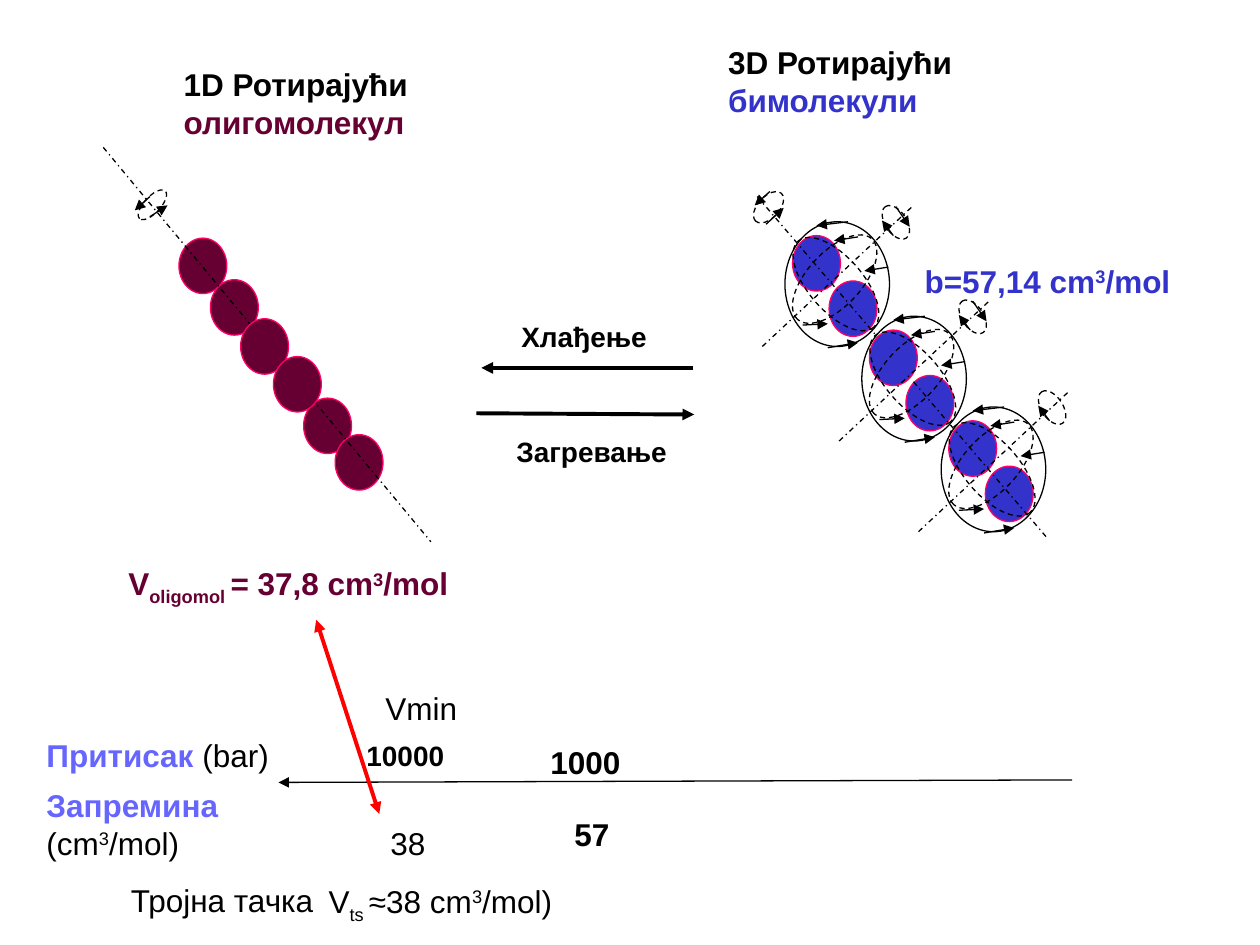
from typing import NamedTuple, Optional

from lxml.etree import SubElement
from pptx import Presentation
from pptx.dml.color import RGBColor
from pptx.enum.dml import MSO_LINE
from pptx.enum.shapes import MSO_CONNECTOR, MSO_SHAPE
from pptx.oxml.ns import qn
from pptx.util import Inches, Pt

BLACK = RGBColor(0x00, 0x00, 0x00)
BLUE = RGBColor(0x33, 0x33, 0xCC)
LILAC = RGBColor(0x66, 0x66, 0xFF)
WINE = RGBColor(0x66, 0x00, 0x33)
PINK = RGBColor(0xFF, 0x00, 0x66)
RED = RGBColor(0xFF, 0x00, 0x00)
COLS, ROWS = 100, 75
WIDE, HIGH = Inches(10), Inches(7.5)
BALL = (3.8, 4.4)
SUPER, SUB = 30, -25


class Oval(NamedTuple):
    x: float
    y: float
    w: float
    h: float
    turn: float = 0
    fill: Optional[RGBColor] = None
    edge: RGBColor = BLACK
    dash: Optional[MSO_LINE] = None


class Line(NamedTuple):
    x1: float
    y1: float
    x2: float
    y2: float
    dash: Optional[MSO_LINE] = None
    ends: tuple = ("tailEnd",)
    color: RGBColor = BLACK
    width: float = 0.75


class Span(NamedTuple):
    text: str
    color: Optional[RGBColor] = None
    bold: Optional[bool] = None
    base: int = 0


class Pair(NamedTuple):
    x: float
    y: float
    long: bool = True
    spin: bool = True


def col(x: float) -> int:
    """Turn grid columns into a length."""
    return round(x * WIDE / COLS)


def row(y: float) -> int:
    """Turn grid rows into a length."""
    return round(y * HIGH / ROWS)


def ring(x: float, y: float, w: float, h: float, turn: float) -> Oval:
    """Describe a dashed, tilted orbit."""
    return Oval(x, y, w, h, turn, dash=MSO_LINE.DASH)


def ball(x: float, y: float, fill: RGBColor) -> Oval:
    """Describe one molecule."""
    return Oval(x, y, *BALL, fill=fill, edge=PINK)


def axis(x1: float, y1: float, x2: float, y2: float) -> Line:
    """Describe a dash-dot axis without arrowheads."""
    return Line(x1, y1, x2, y2, MSO_LINE.DASH_DOT, ())


def draw(shapes, part, dx: float = 0, dy: float = 0) -> None:
    """Draw an oval or a line, moved by dx columns and dy rows."""
    if isinstance(part, Oval):
        item = shapes.add_shape(MSO_SHAPE.OVAL, col(part.x + dx), row(part.y + dy),
                                col(part.w), row(part.h))
        item.shadow.inherit = False
        item.rotation = part.turn
        if part.fill is None:
            item.fill.background()
        else:
            item.fill.solid()
            item.fill.fore_color.rgb = part.fill
        item.line.color.rgb = part.edge
        item.line.width = Pt(0.75)
    else:
        item = shapes.add_connector(MSO_CONNECTOR.STRAIGHT, col(part.x1 + dx), row(part.y1 + dy),
                                    col(part.x2 + dx), row(part.y2 + dy))
        item.line.color.rgb = part.color
        item.line.width = Pt(part.width)
        frame = item.element.spPr
        for end in part.ends:
            SubElement(frame.get_or_add_ln(), qn(f"a:{end}"), type="triangle")
        SubElement(frame, qn("a:effectLst"))
    if part.dash is not None:
        item.line.dash_style = part.dash


def write(shapes, x: float, y: float, w: float, h: float, *spans: Span,
          size: float = 18, color: RGBColor = BLACK, bold: bool = False) -> None:
    """Write one wrapped paragraph of spans."""
    frame = shapes.add_textbox(col(x), row(y), col(w), row(h)).text_frame
    frame.word_wrap = True
    for span in spans:
        run = frame.paragraphs[0].add_run()
        run.text = span.text
        font = run.font
        font.name, font.size = "Arial", Pt(size)
        font.bold = bold if span.bold is None else span.bold
        font.color.rgb = span.color or color
        if span.base:
            run._r.get_or_add_rPr().set("baseline", str(span.base * 1000))


def draw_pair(shapes, pair: Pair) -> None:
    """Draw one bimolecule with its orbits and axes."""
    parts = [
        Oval(0, 0, 8.3, 9.9),
        ball(0.6, 1.1, BLUE),
        ball(3.5, 4.7, BLUE),
        Line(5, 0, 2.5, 0.3),
        Line(1.4, 8.2, 3.4, 8.1),
        ring(-0.4, 2.4, 8.7, 4.3, 312.8),
        Line(3.4, 10, 5.8, 9.6),
        Line(5.8, 1.2, 3.9, 1.5),
        ring(-0.5, 2.8, 9.1, 4.3, 228.8),
        axis(-1.8, 9.9, 10.1, -1.2),
        Line(8.2, 3.6, 6.3, 3.9),
        ring(7.3, -0.8, 3, 1.7, 56.6),
        Line(8.6, 1.1, 7.7, -0.1),
    ]
    if pair.long:
        parts.append(axis(-2.2, -2, 8.5, 10.5))
    if pair.spin:
        parts.append(Line(8.8, -1.2, 9.9, 0.4))
    for part in parts:
        draw(shapes, part, pair.x, pair.y)


def main() -> None:
    """Build and save the slide."""
    deck = Presentation()
    deck.slide_width, deck.slide_height = WIDE, HIGH
    shapes = deck.slides.add_slide(deck.slide_layouts[6]).shapes

    for pair in (Pair(62.3, 17.6), Pair(68.4, 25.1, long=False), Pair(74.7, 32.3, spin=False)):
        draw_pair(shapes, pair)

    chain = [ball(x, y, WINE) for x, y in (
        (24.1, 31.6), (26.6, 34.5), (14.2, 18.9), (16.7, 22.2), (19.1, 25.3), (21.7, 28.3))]
    for part in (
        ring(59.5, 15.6, 3, 1.7, 312.8),
        Line(61.1, 15.2, 59.9, 16.3),
        Line(60.8, 17.8, 62.2, 16.5),
        *chain[:4],
        axis(8.2, 11.7, 34.2, 43),
        ring(10.6, 15.6, 3, 1.3, 312.8),
        Line(11.9, 15.6, 10.7, 16.7),
        Line(11.9, 17.2, 13.3, 16.3),
        *chain[4:],
        Line(37.8, 32.8, 55.1, 32.9, width=2.25),
        Line(55, 29.2, 38.2, 29.2, width=2.25),
        Line(85.1, 61.9, 22.1, 62.1),
        Line(30.1, 64.6, 25.1, 49.2, ends=("headEnd", "tailEnd"), color=RED, width=2.25),
    ):
        draw(shapes, part)

    cube, mol = Span("3", base=SUPER), Span("/mol")
    write(shapes, 56.8, 2.9, 19.9, 7.1, Span("3D Ротирајући "), Span("бимолекули", BLUE), bold=True)
    write(shapes, 13.6, 4.7, 25.7, 7, Span("1D Ротирајући "), Span("олигомолекул", WINE), bold=True)
    write(shapes, 72.4, 20.3, 24.7, 4, Span("b=57,14 cm"), cube, mol, color=BLUE, bold=True)
    write(shapes, 9.2, 44.3, 31.4, 4, Span("V"), Span("oligomol ", base=SUB),
          Span("= 37,8 cm"), cube, mol, color=WINE, bold=True)
    write(shapes, 40.4, 24.9, 15.7, 3.7, Span("Хлађење"), size=16, bold=True)
    write(shapes, 40, 34, 15.6, 3.7, Span("Загревање"), size=16, bold=True)
    write(shapes, 42.7, 58.5, 9.8, 4, Span("1000"), bold=True)
    write(shapes, 2.7, 57.9, 22.8, 4, Span("Притисак ", LILAC, True), Span("(bar)"))
    write(shapes, 44.6, 64.2, 8.7, 4, Span("57"), bold=True)
    write(shapes, 28.1, 58.1, 8.2, 3.7, Span("10000"), size=16, bold=True)
    write(shapes, 30, 64.9, 10.3, 4, Span("38"))
    write(shapes, 29.6, 54.2, 9.2, 4, Span("Vmin"))
    write(shapes, 2.7, 61.9, 21.6, 7, Span("Запремина ", LILAC, True), Span("(cm"), cube, Span("/mol)"))
    write(shapes, 25.1, 69.5, 22, 4, Span("V"), Span("ts ", base=SUB), Span("≈38 cm"), cube, Span("/mol)"))
    write(shapes, 9.4, 69.4, 19.3, 4, Span("Тројна тачка"))
    deck.save("out.pptx")


if __name__ == "__main__":
    main()
